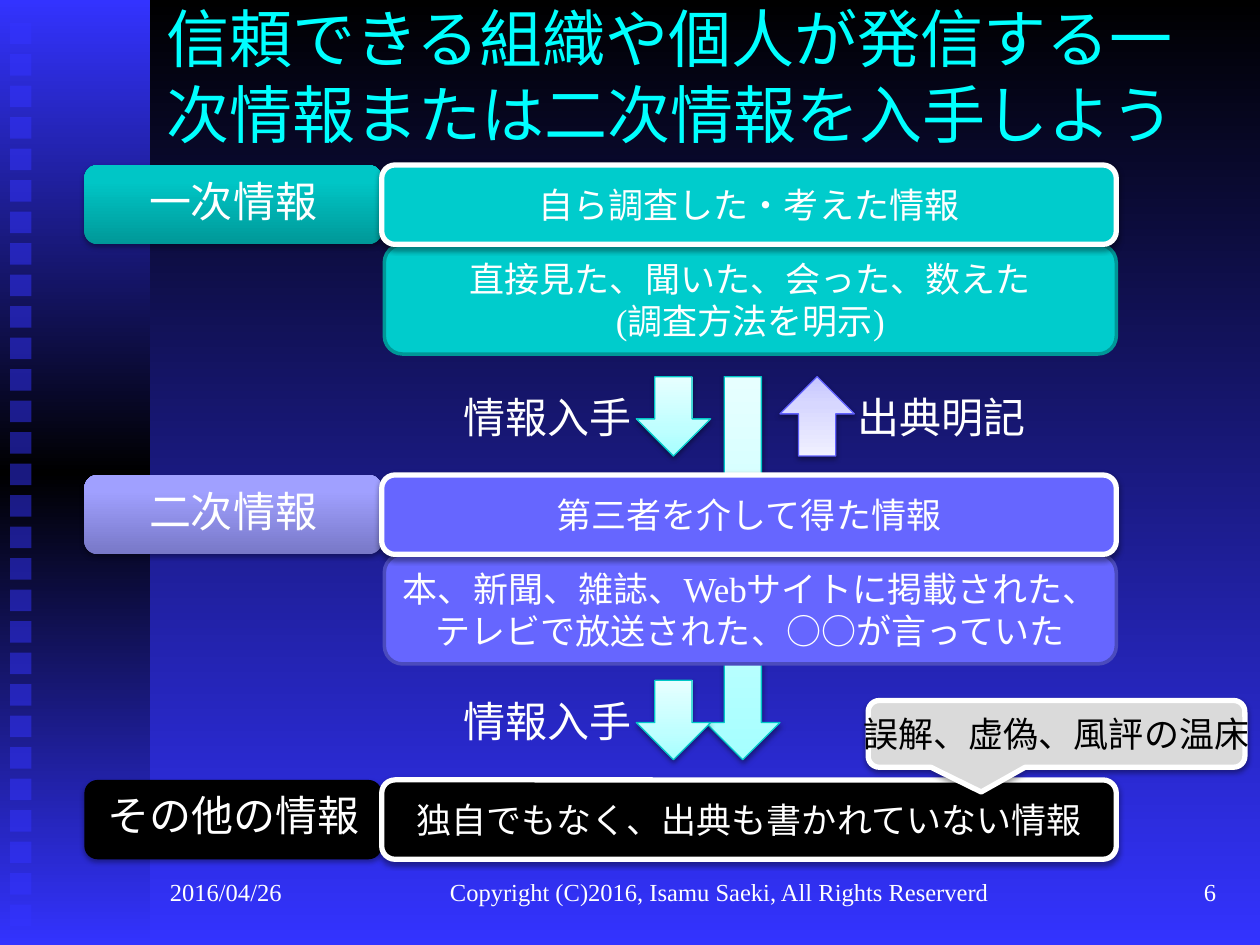
from lxml import etree
from pptx import Presentation
from pptx.dml.color import RGBColor
from pptx.enum.shapes import MSO_SHAPE
from pptx.enum.text import MSO_ANCHOR, PP_ALIGN
from pptx.oxml.ns import qn
from pptx.util import Inches, Pt

RECT = MSO_SHAPE.RECTANGLE
ROUND = MSO_SHAPE.ROUNDED_RECTANGLE
DOWN = MSO_SHAPE.DOWN_ARROW
CALLOUT = MSO_SHAPE.ROUNDED_RECTANGULAR_CALLOUT
TOP, MIDDLE = MSO_ANCHOR.TOP, MSO_ANCHOR.MIDDLE
LEFT, CENTER, RIGHT = PP_ALIGN.LEFT, PP_ALIGN.CENTER, PP_ALIGN.RIGHT

WHITE, BLACK, BLUE = "FFFFFF", "000000", "3333FF"
TEAL, VIOLET = "00CCCC", "6666FF"
SOFT, DEEP = (38, 1.6), (35, 1.8)


def paint(fill, color, angle=270):
    fill.solid()
    if isinstance(color, str):
        fill.fore_color.rgb = RGBColor.from_string(color)
        return
    solid = fill._xPr.find(qn("a:solidFill"))
    grad = etree.Element(qn("a:gradFill"), rotWithShape="1")
    stops = etree.SubElement(grad, qn("a:gsLst"))
    for pos, tone in color:
        stop = etree.SubElement(stops, qn("a:gs"), pos=str(pos * 1000))
        etree.SubElement(stop, qn("a:srgbClr"), val=tone)
    etree.SubElement(grad, qn("a:lin"), ang=str(angle * 60000), scaled="0")
    fill._xPr.replace(solid, grad)


def box(kind, at, color=None, line=None, shade=None, lines=(), size=20,
        ink=WHITE, align=CENTER, anchor=MIDDLE, wrap=False, angle=270):
    spot = [Inches(n) for n in at]
    if kind is None:
        shape = slide.shapes.add_textbox(*spot)
    else:
        shape = slide.shapes.add_shape(kind, *spot)
        paint(shape.fill, color, angle)
        shape.shadow.inherit = False
        if line:
            paint(shape.line.fill, line[0])
            shape.line.width = Pt(line[1])
        else:
            shape.line.fill.background()
    if shade:
        alpha, dist = shade
        effect = shape._element.spPr.find(qn("a:effectLst"))
        cast = etree.SubElement(effect, qn("a:outerShdw"), blurRad=str(Pt(3.1)),
                                dist=str(Pt(dist)), dir="5400000", rotWithShape="0")
        tone = etree.SubElement(cast, qn("a:srgbClr"), val=BLACK)
        etree.SubElement(tone, qn("a:alpha"), val=str(alpha * 1000))
    frame = shape.text_frame
    frame.word_wrap = wrap
    frame.vertical_anchor = anchor
    for i, text in enumerate(lines):
        para = frame.paragraphs[0] if i == 0 else frame.add_paragraph()
        para.alignment = align
        run = para.add_run()
        run.text = text
        run.font.size = Pt(size)
        run.font.name = "Times New Roman"
        run.font.color.rgb = RGBColor.from_string(ink)
    return shape


deck = Presentation()
deck.slide_width, deck.slide_height = Inches(10), Inches(7.5)
slide = deck.slides.add_slide(deck.slide_layouts[6])
paint(slide.background.fill, [(0, BLACK), (100, BLUE)], 90)

box(RECT, (0, 0, 1.19, 7.5), [(0, BLUE), (50, BLACK), (100, BLUE)], angle=90)
for i in range(29):
    square = box(RECT, (0.08, 0.18 + 0.25 * i, 0.17, 0.17), BLUE)
    tone = square._element.spPr.find(qn("a:solidFill"))[0]
    etree.SubElement(tone, qn("a:alpha"), val="50000")

aqua = [(0, "A5FFFF"), (35, "BFFFFF"), (100, "E7FFFF")]
lilac = [(0, "C6C6FF"), (35, "D7D7FF"), (100, "F0F0FF")]
box(DOWN, (5.6, 2.99, 0.59, 3.04), aqua, ("00C8C8", 0.75), SOFT)

box(None, (1.22, -0.03, 8.5, 1.25), size=36, ink="00FFFF", align=LEFT, wrap=True,
    lines=["信頼できる組織や個人が発信する一次情報または二次情報を入手しよう"])
for left, width, align, text in [
    (1.25, 1.17, LEFT, "2016/04/26"),
    (2.42, 6.58, CENTER, "Copyright (C)2016, Isamu Saeki, All Rights Reserverd"),
    (9.08, 0.67, RIGHT, "6"),
]:
    box(None, (left, 6.83, width, 0.5), lines=[text], size=14, align=align, wrap=True)

tiers = [
    (1.31, "一次情報", [(0, "009898"), (80, "00C6C6"), (100, "00C7C7")],
     TEAL, "009797", "自ら調査した・考えた情報",
     ["直接見た、聞いた、会った、数えた", "(調査方法を明示)"]),
    (3.77, "二次情報", [(0, "7878C7"), (80, "A0A0FF"), (100, "A2A2FF")],
     VIOLET, "4B4BBD", "第三者を介して得た情報",
     ["本、新聞、雑誌、Webサイトに掲載された、", "テレビで放送された、○○が言っていた"]),
    (6.19, "その他の情報", BLACK, BLACK, None,
     "独自でもなく、出典も書かれていない情報", []),
]
for top, label, tint, color, edge, head, notes in tiers:
    box(ROUND, (0.67, top, 2.36, 0.63), tint, None, DEEP, [label], 24, anchor=TOP)
    if notes:
        box(ROUND, (3.05, top + 0.63, 5.81, 0.87), color, (edge, 2), lines=notes)
    box(ROUND, (3.03, top, 5.83, 0.63), color, (WHITE, 3), SOFT, [head])

for top in (2.99, 5.4):
    box(DOWN, (5.05, top, 0.59, 0.63), aqua, ("00C8C8", 0.75), SOFT)
    box(None, (3.58, top + 0.07, 1.55, 0.5), lines=["情報入手"], size=24,
        align=LEFT, anchor=TOP)

rise = box(DOWN, (6.19, 2.99, 0.59, 0.63), lilac, ("6060FD", 0.75), SOFT)
rise._element.spPr.find(qn("a:xfrm")).set("flipV", "1")
box(None, (6.71, 3.06, 1.55, 0.5), lines=["出典明記"], size=24, align=LEFT, anchor=TOP)

bubble = box(CALLOUT, (6.89, 5.56, 2.99, 0.53), "DADADA", (WHITE, 3), SOFT,
             ["誤解、虚偽、風評の温床"], ink=BLACK)
bubble.adjustments[0] = -0.2
bubble.adjustments[1] = 0.87

deck.save("out.pptx")
